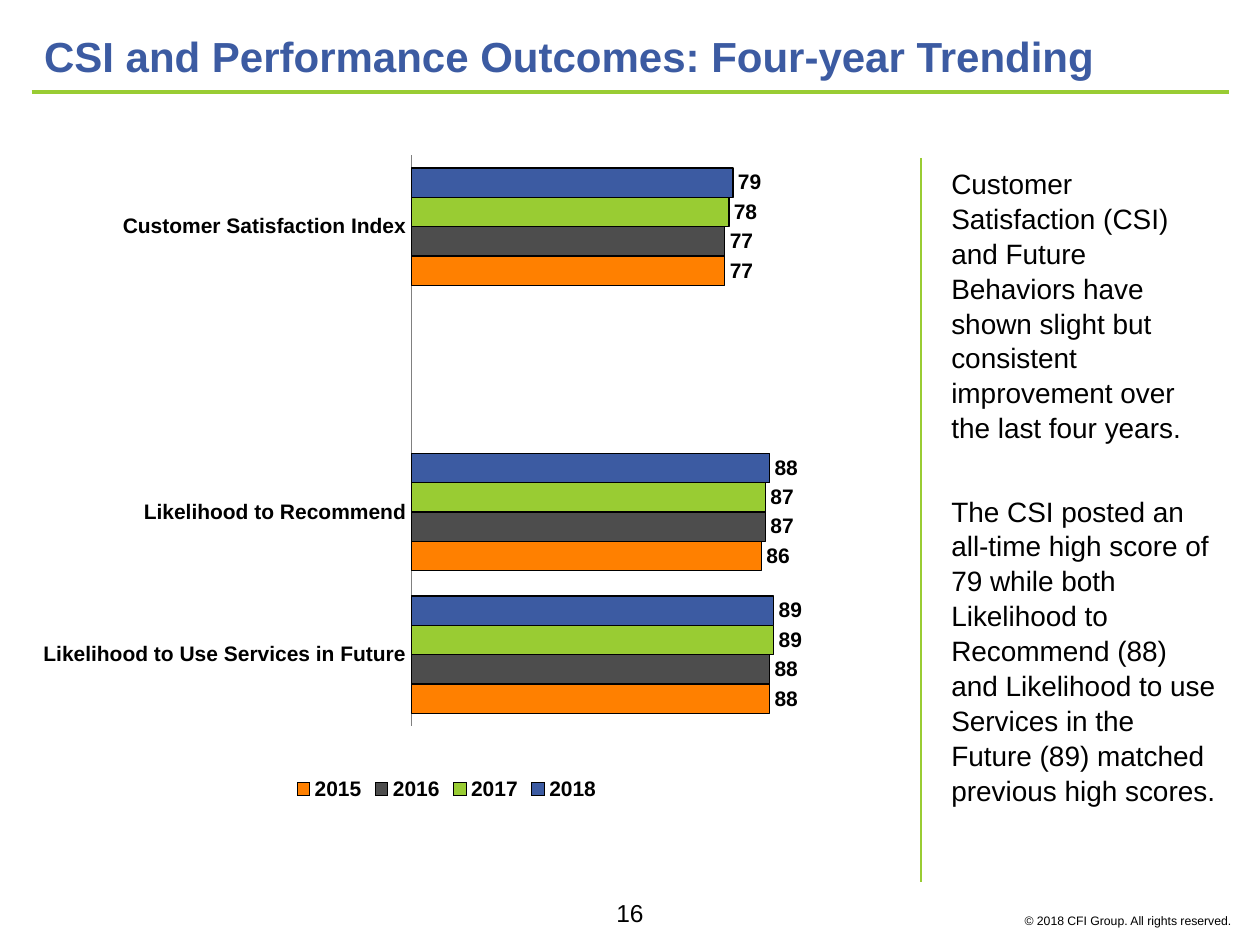
from dataclasses import dataclass

from lxml import etree
from pptx import Presentation
from pptx.chart.data import CategoryChartData
from pptx.dml.color import RGBColor
from pptx.enum.chart import (XL_CHART_TYPE, XL_LABEL_POSITION,
                             XL_LEGEND_POSITION, XL_TICK_MARK)
from pptx.enum.shapes import MSO_CONNECTOR
from pptx.enum.text import MSO_ANCHOR, PP_ALIGN
from pptx.oxml import parse_xml
from pptx.oxml.ns import nsdecls, qn
from pptx.util import Inches, Pt

BAR = XL_CHART_TYPE.BAR_CLUSTERED
OUTSIDE = XL_LABEL_POSITION.OUTSIDE_END
BOTTOM = XL_LEGEND_POSITION.BOTTOM
NO_TICK = XL_TICK_MARK.NONE
STRAIGHT = MSO_CONNECTOR.STRAIGHT
TOP, MIDDLE = MSO_ANCHOR.TOP, MSO_ANCHOR.MIDDLE
LEFT, CENTER, RIGHT = PP_ALIGN.LEFT, PP_ALIGN.CENTER, PP_ALIGN.RIGHT

WIDE, HIGH = Inches(10), Inches(7.5)
FACE = "Arial"
HUES = {"blue": "3C5BA2", "green": "99CC33", "gray": "4D4D4D",
        "orange": "FF8000", "axis": "808080", "ink": "000000"}


@dataclass
class Area:
    """A box given as shares of the slide's width and height."""
    left: float
    top: float
    width: float
    height: float

    def spans(self) -> tuple:
        return (int(WIDE * self.left), int(HIGH * self.top),
                int(WIDE * self.width), int(HIGH * self.height))


@dataclass
class Rule:
    area: Area
    weight: float


@dataclass
class Year:
    name: str
    scores: tuple
    hue: str


@dataclass
class Style:
    size: float
    hue: str = "ink"
    bold: bool = False
    align: int = LEFT
    anchor: int = TOP
    leading: float = 1.0
    gap: float = 0


RULES = [Rule(Area(0.025, 0.097, 0.95, 0), 2.25),
         Rule(Area(0.731, 0.167, 0, 0.766), 1)]
GROUPS = ["Customer Satisfaction Index", "", "Likelihood to Recommend",
          "Likelihood to Use Services in Future"]
YEARS = [Year("2018", (79, None, 88, 89), "blue"),
         Year("2017", (78, None, 87, 89), "green"),
         Year("2016", (77, None, 87, 88), "gray"),
         Year("2015", (77, None, 86, 88), "orange")]
NOTES = ["Customer Satisfaction (CSI) and Future Behaviors have shown slight "
         "but consistent improvement over the last four years.",
         "The CSI posted an all-time high score of 79 while both Likelihood "
         "to Recommend (88) and Likelihood to use Services in the Future (89) "
         "matched previous high scores."]


def color(hue: str) -> RGBColor:
    return RGBColor.from_string(HUES[hue])


def apply(item, values: dict) -> None:
    for key, value in values.items():
        setattr(item, key, value)


def set_font(font, size: float, hue: str = "ink", bold: bool = False) -> None:
    apply(font, {"name": FACE, "size": Pt(size), "bold": bold})
    font.color.rgb = color(hue)


def write(shape, area: Area, lines: list, style: Style) -> None:
    apply(shape, dict(zip(("left", "top", "width", "height"), area.spans())))
    frame = shape.text_frame
    frame.text = "\n".join(lines)
    apply(frame, {"word_wrap": True, "vertical_anchor": style.anchor})
    for row, para in enumerate(frame.paragraphs):
        props = para._p.get_or_add_pPr()
        apply_xml = {"marL": "0", "indent": "0"}
        for key, value in apply_xml.items():
            props.set(key, value)
        etree.SubElement(props, qn("a:buNone"))
        apply(para, {"alignment": style.align, "line_spacing": style.leading,
                     "space_before": Pt(style.gap if row else 0)})
        set_font(para.font, style.size, style.hue, style.bold)


def draw_rule(slide, rule: Rule) -> None:
    x, y, w, h = rule.area.spans()
    line = slide.shapes.add_connector(STRAIGHT, x, y, x + w, y + h)
    line.line.color.rgb = color("green")
    line.line.width = Pt(rule.weight)
    etree.SubElement(line._element.spPr, qn("a:effectLst"))


def draw_chart(slide, area: Area) -> None:
    data = CategoryChartData()
    data.categories = GROUPS
    for year in YEARS:
        data.add_series(year.name, year.scores)
    chart = slide.shapes.add_chart(BAR, *area.spans(), data).chart
    set_font(chart.font, 10)
    apply(chart, {"has_title": False, "has_legend": True})
    apply(chart.legend, {"position": BOTTOM, "include_in_layout": False})
    set_font(chart.legend.font, 12, bold=True)

    # Axes
    apply(chart.category_axis, {"reverse_order": True,
                                "major_tick_mark": NO_TICK})
    set_font(chart.category_axis.tick_labels.font, 12, bold=True)
    chart.category_axis.format.line.color.rgb = color("axis")
    apply(chart.value_axis, {"minimum_scale": 0, "maximum_scale": 110,
                             "major_unit": 100, "visible": False,
                             "has_major_gridlines": False})

    # Bars and their labels
    plot = chart.plots[0]
    apply(plot, {"gap_width": 85, "overlap": 0, "vary_by_categories": False})
    for bars, year in zip(plot.series, YEARS):
        bars.format.fill.solid()
        bars.format.fill.fore_color.rgb = color(year.hue)
        bars.format.line.color.rgb = color("ink")
        bars.format.line.width = Pt(0.75)
        apply(bars.data_labels, {"show_value": True, "position": OUTSIDE})
        set_font(bars.data_labels.font, 12, bold=True)

    # Fixed place of the plot inside the chart
    parts = {"x": 0.459, "y": 0.029, "w": 0.519, "h": 0.853}
    modes = "".join(f'<c:{key}Mode val="edge"/>' for key in "xy")
    sizes = "".join(f'<c:{key} val="{val}"/>' for key, val in parts.items())
    layout = parse_xml(f'<c:layout {nsdecls("c")}><c:manualLayout>'
                       f'<c:layoutTarget val="inner"/>{modes}{sizes}'
                       '</c:manualLayout></c:layout>')
    region = chart._chartSpace.chart.plotArea
    for old in region.findall(qn("c:layout")):
        region.remove(old)
    region.insert(0, layout)


def main() -> None:
    deck = Presentation()
    apply(deck, {"slide_width": WIDE, "slide_height": HIGH})
    slide = deck.slides.add_slide(deck.slide_layouts[1])

    # Title and body
    write(slide.shapes.title, Area(0.025, 0.02, 0.95, 0.077),
          ["CSI and Performance Outcomes: Four-year Trending"],
          Style(24, "blue", True, anchor=MIDDLE))
    write(slide.placeholders[1], Area(0.745, 0.168, 0.23, 0.74), NOTES,
          Style(16, leading=1.045, gap=27.6))

    # Rules and chart
    for rule in RULES:
        draw_rule(slide, rule)
    draw_chart(slide, Area(0.012, 0.144, 0.685, 0.708))

    # Footer
    for area, line, style in (
            (Area(0.471, 0.944, 0.058, 0.045), "16", Style(14, align=CENTER)),
            (Area(0.759, 0.96, 0.228, 0.029),
             "© 2018 CFI Group. All rights reserved.", Style(7, align=RIGHT))):
        write(slide.shapes.add_textbox(0, 0, 0, 0), area, [line], style)

    deck.save("out.pptx")


if __name__ == "__main__":
    main()
